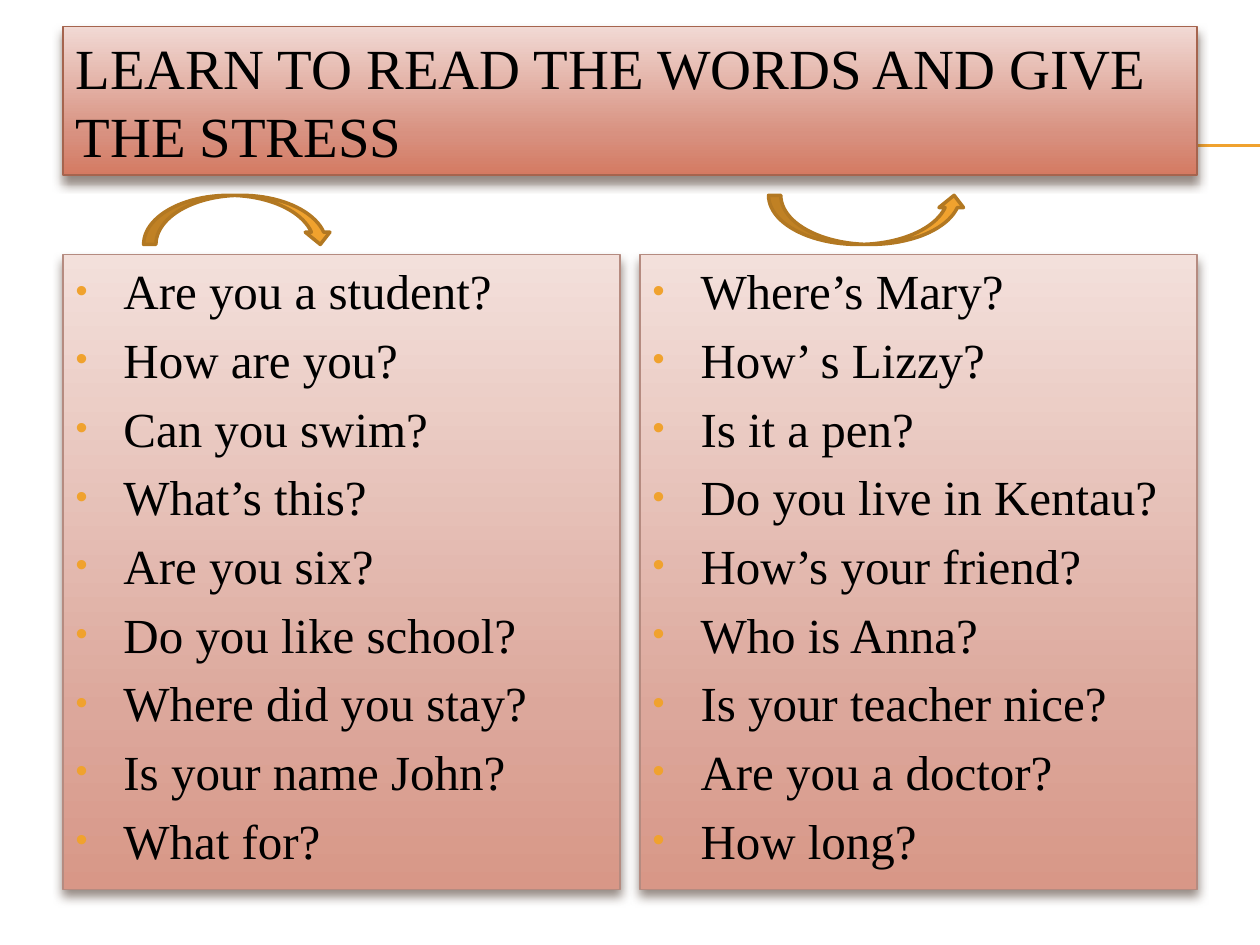
from copy import deepcopy

from lxml import etree
from pptx import Presentation
from pptx.dml.color import RGBColor
from pptx.enum import shapes, text
from pptx.oxml import ns
from pptx.util import Inches, Pt

FONT = "Times New Roman"
ORANGE = "F0A22E"
TITLE = "LEARN TO READ THE WORDS AND GIVE THE STRESS"
QUESTIONS = [
    ["Are you a student?", "How are you?", "Can you swim?", "What’s this?", "Are you six?",
     "Do you like school?", "Where did you stay?", "Is your name John?", "What for?"],
    ["Where’s Mary?", "How’ s Lizzy?", "Is it a pen?", "Do you live in Kentau?",
     "How’s your friend?", "Who is Anna?", "Is your teacher nice?", "Are you a doctor?",
     "How long?"],
]
TITLE_STOPS = [(0, "F1D9D4"), (0.72, "D89180"), (1, "D47A62")]
LIST_STOPS = [(0, "F3E0DB"), (0.72, "DCA79B"), (1, "D89787")]
ARROWS = [
    (shapes.MSO_SHAPE.CURVED_DOWN_ARROW, 1.14, 1.5),
    (shapes.MSO_SHAPE.CURVED_UP_ARROW, 6.1, 1.57),
]
MARGIN, LIST_WIDTH, LIST_GAP = 0.5, 4.42, 0.16


def rgb(code):
    return RGBColor.from_string(code)


def child(parent, tag, **attributes):
    return etree.SubElement(parent, ns.qn(tag), attributes)


def place(shape, left, top, width, height):
    shape.left, shape.top = Inches(left), Inches(top)
    shape.width, shape.height = Inches(width), Inches(height)


def outline(shape, color, width):
    shape.line.color.rgb = rgb(color)
    shape.line.width = Pt(width)


def style_panel(panel, stops, line_color):
    """Give a placeholder a downward gradient, an outline and a soft shadow."""
    panel.fill.gradient()
    panel.fill.gradient_angle = 270
    properties = panel._element.spPr
    stop_list = properties.find(".//" + ns.qn("a:gsLst"))
    stop_list.append(deepcopy(stop_list[-1]))
    for stop, (position, color) in zip(panel.fill.gradient_stops, stops):
        stop.position = position
        stop.color.rgb = rgb(color)
    outline(panel, line_color, 0.79)
    shadow = child(child(properties, "a:effectLst"), "a:outerShdw", blurRad=str(Pt(6)),
                   dist=str(Pt(4)), dir="5400000", rotWithShape="0")
    child(child(shadow, "a:srgbClr", val="4E3B30"), "a:alpha", val="60000")
    panel.text_frame.auto_size = text.MSO_AUTO_SIZE.NONE
    panel.text_frame.word_wrap = True


def add_span(para, words, size):
    para.alignment = text.PP_ALIGN.LEFT
    span = para.add_run()
    span.text = words
    span.font.name = FONT
    span.font.size = Pt(size)
    span.font.color.rgb = rgb("000000")


def add_bullet(para):
    properties = para._p.get_or_add_pPr()
    properties.set("marL", str(Inches(0.38)))
    properties.set("indent", str(Inches(-0.38)))
    child(child(properties, "a:buClr"), "a:srgbClr", val=ORANGE)
    child(properties, "a:buSzPct", val="70000")
    child(properties, "a:buFont", typeface="Arial")
    child(properties, "a:buChar", char="•")


def main():
    deck = Presentation()
    deck.slide_width, deck.slide_height = Inches(10), Inches(7.5)
    page = deck.slides.add_slide(deck.slide_layouts[3])
    heading, *lists = page.placeholders

    for index, y in enumerate((1.15, 1.16)):
        rule = page.shapes.add_connector(shapes.MSO_CONNECTOR.STRAIGHT, Inches(0.56),
                                         Inches(y), Inches(10), Inches(y))
        outline(rule, ORANGE, 0.75)
        child(rule._element.spPr, "a:effectLst")
        page.shapes._spTree.insert(2 + index, rule._element)  # behind the title

    place(heading, MARGIN, 0.21, 9, 1.18)
    style_panel(heading, TITLE_STOPS, "A5644E")
    heading.text_frame.vertical_anchor = text.MSO_ANCHOR.MIDDLE
    add_span(heading.text_frame.paragraphs[0], TITLE, 32.4)

    for column, (box, questions) in enumerate(zip(lists, QUESTIONS)):
        place(box, MARGIN + column * (LIST_WIDTH + LIST_GAP), 2.02, LIST_WIDTH, 5.04)
        style_panel(box, LIST_STOPS, "B58B80")
        frame = box.text_frame
        for row, question in enumerate(questions):
            para = frame.add_paragraph() if row else frame.paragraphs[0]
            add_bullet(para)
            add_span(para, question, 28)

    for kind, left, width in ARROWS:
        arrow = page.shapes.add_shape(kind, Inches(left), Inches(1.55), Inches(width),
                                      Inches(0.39))
        arrow.shadow.inherit = False
        arrow.fill.solid()
        arrow.fill.fore_color.rgb = rgb(ORANGE)
        outline(arrow, "B27822", 2)

    deck.save("out.pptx")


if __name__ == "__main__":
    main()
